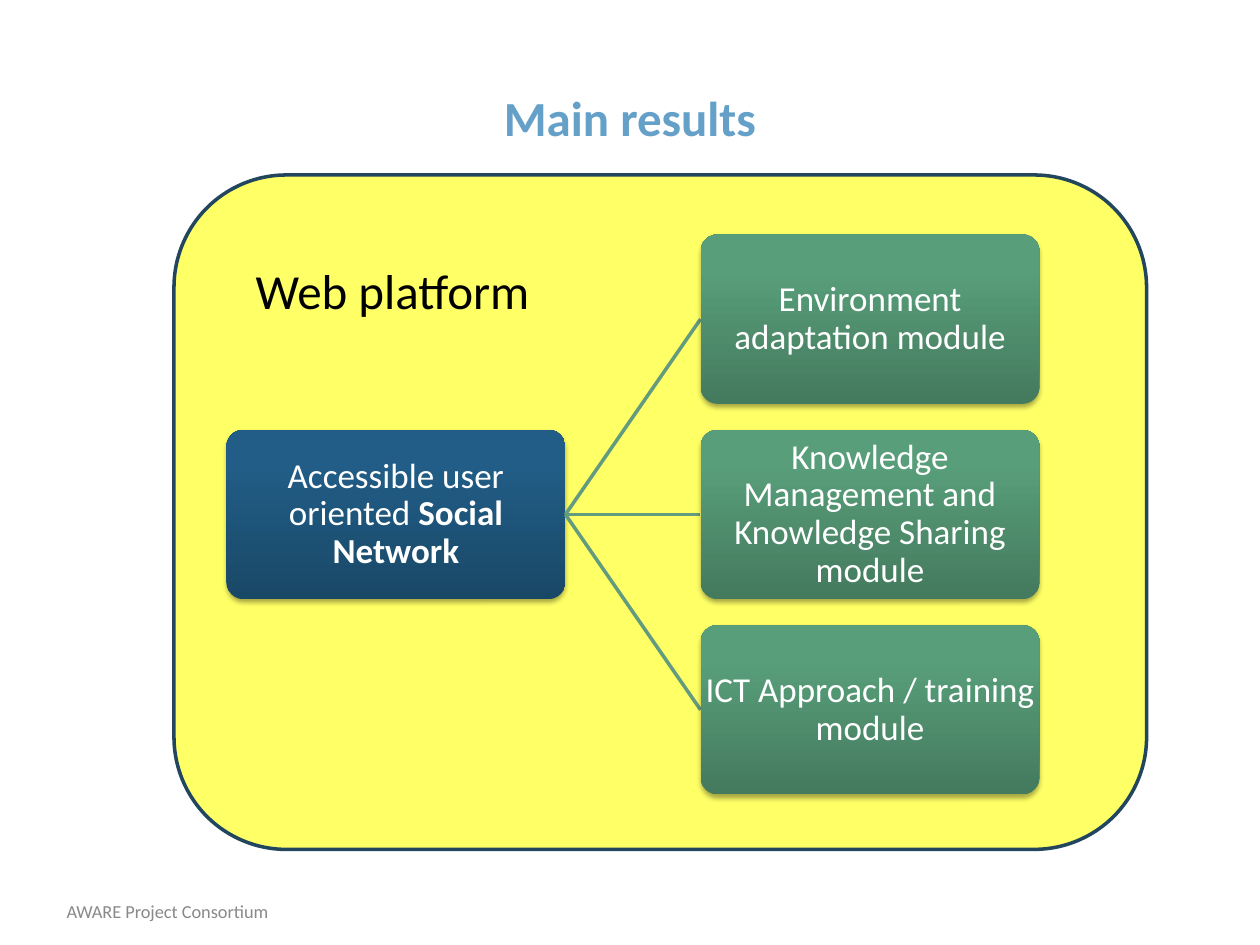
from dataclasses import dataclass

from lxml import etree
from pptx import Presentation
from pptx.dml.color import RGBColor
from pptx.enum.shapes import MSO_CONNECTOR, MSO_SHAPE
from pptx.enum.text import MSO_ANCHOR, PP_ALIGN
from pptx.oxml import parse_xml
from pptx.oxml.ns import qn
from pptx.util import Pt

ROUNDED = MSO_SHAPE.ROUNDED_RECTANGLE
STRAIGHT = MSO_CONNECTOR.STRAIGHT
TOP, MIDDLE, BOTTOM = MSO_ANCHOR.TOP, MSO_ANCHOR.MIDDLE, MSO_ANCHOR.BOTTOM
LEFT, CENTER = PP_ALIGN.LEFT, PP_ALIGN.CENTER
DRAWING = "http://schemas.openxmlformats.org/drawingml/2006/main"


@dataclass(frozen=True)
class Theme:
    font: str = "Calibri"
    heading_size: float = 28
    node_size: float = 20
    footer_size: float = 10.5
    line_width: float = 2
    title: str = "64A0C8"
    footer: str = "898989"
    black: str = "000000"
    white: str = "FFFFFF"
    panel: str = "FFFF66"
    panel_line: str = "22465D"
    link: str = "639B7E"
    blue: tuple = ("194867", "215D86", "1F5E88")
    green: tuple = ("447A5E", "589E7A", "57A07A")


THEME = Theme()
NODE_WIDTH, NODE_HEIGHT, NODE_STEP = 193.7, 96.8, 111.6
ROOT_LEFT, MODULE_LEFT = 129.4, 400.3
CENTER_Y = 294
MODULES = [
    "Environment adaptation module",
    "Knowledge Management and Knowledge Sharing module",
    "ICT Approach / training module",
]


def color(value):
    return RGBColor.from_string(value)


def add_text(page, spans, left, top, width, height, *, size, fill,
             align=LEFT, anchor=TOP, bold=False, inset=None,
             spacing=None, wrap=True):
    box = page.shapes.add_textbox(Pt(left), Pt(top), Pt(width), Pt(height))
    frame = box.text_frame
    frame.word_wrap = wrap
    frame.vertical_anchor = anchor
    if inset is not None:
        frame.margin_left = frame.margin_right = Pt(inset)
        frame.margin_top = frame.margin_bottom = Pt(inset)
    para = frame.paragraphs[0]
    para.alignment = align
    if spacing:
        para.line_spacing = spacing
    for text, strong in [(spans, bold)] if isinstance(spans, str) else spans:
        span = para.add_run()
        span.text = text
        span.font.name = THEME.font
        span.font.size = Pt(size)
        span.font.bold = strong
        span.font.color.rgb = color(fill)


def add_rounded(page, left, top, width, height):
    shape = page.shapes.add_shape(
        ROUNDED, Pt(left), Pt(top), Pt(width), Pt(height))
    shape.shadow.inherit = False
    return shape


def add_panel(page):
    panel = add_rounded(page, 99.4, 100, 555.8, 385.4)
    panel.fill.solid()
    panel.fill.fore_color.rgb = color(THEME.panel)
    panel.line.color.rgb = color(THEME.panel_line)
    panel.line.width = Pt(THEME.line_width)


def set_gradient(shape, colors):
    shape.fill.gradient()
    shape.fill.gradient_angle = 90
    stops = shape._element.spPr.find(".//" + qn("a:gsLst"))
    for stop in list(stops):
        stops.remove(stop)
    for position, value in zip((0, 80, 100), colors):
        stop = etree.SubElement(stops, qn("a:gs"), pos=str(position * 1000))
        etree.SubElement(stop, qn("a:srgbClr"), val=value)


def set_shadow(shape):
    effects = shape._element.spPr.find(qn("a:effectLst"))
    effects.append(parse_xml(
        f'<a:outerShdw xmlns:a="{DRAWING}" blurRad="{Pt(3.1)}" '
        f'dist="{Pt(1.8)}" dir="5400000" rotWithShape="0">'
        f'<a:srgbClr val="{THEME.black}"><a:alpha val="35000"/></a:srgbClr>'
        '</a:outerShdw>'))


def add_node(page, spans, left, middle, colors):
    frame = (left, middle - NODE_HEIGHT / 2, NODE_WIDTH, NODE_HEIGHT)
    node = add_rounded(page, *frame)
    node.adjustments[0] = 0.1
    node.line.fill.background()
    set_gradient(node, colors)
    set_shadow(node)
    add_text(page, spans, *frame, size=THEME.node_size, fill=THEME.white,
             align=CENTER, anchor=MIDDLE, inset=0.9, spacing=0.9)


def add_link(page, middle):
    link = page.shapes.add_connector(
        STRAIGHT, Pt(ROOT_LEFT + NODE_WIDTH), Pt(CENTER_Y),
        Pt(MODULE_LEFT), Pt(middle))
    link.line.color.rgb = color(THEME.link)
    link.line.width = Pt(THEME.line_width)
    etree.SubElement(link._element.spPr, qn("a:effectLst"))


def main():
    deck = Presentation()
    deck.slide_width, deck.slide_height = Pt(720), Pt(540)
    page = deck.slides.add_slide(deck.slide_layouts[6])

    add_text(page, "AWARE Project Consortium", 31, 510.5, 232.6, 20.2,
             size=THEME.footer_size, fill=THEME.footer, anchor=BOTTOM)
    add_panel(page)
    add_text(page, "Main results", 36, 21.6, 648, 90,
             size=THEME.heading_size, fill=THEME.title, bold=True,
             align=CENTER, anchor=MIDDLE)

    add_node(page, [("Accessible user oriented ", False),
                    ("Social Network", True)],
             ROOT_LEFT, CENTER_Y, THEME.blue)
    for index, module in enumerate(MODULES):
        middle = CENTER_Y + (index - 1) * NODE_STEP
        add_link(page, middle)
        add_node(page, module, MODULE_LEFT, middle, THEME.green)

    add_text(page, "Web platform", 139, 145.4, 173.5, 41,
             size=THEME.heading_size, fill=THEME.black, wrap=False)
    deck.save("out.pptx")


if __name__ == "__main__":
    main()
